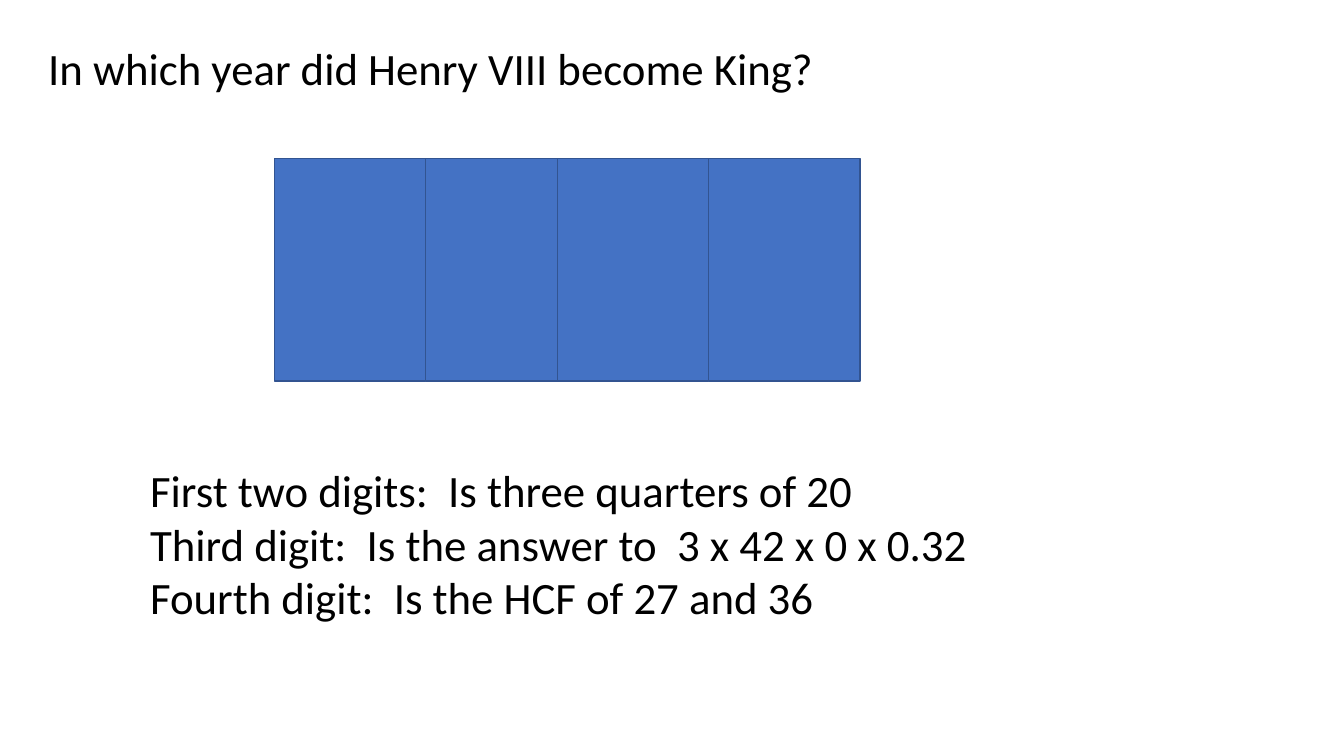
from pptx import Presentation
from pptx.dml.color import RGBColor
from pptx.enum.shapes import MSO_SHAPE
from pptx.enum.text import MSO_AUTO_SIZE
from pptx.util import Pt

PX = 9144  # 100 px to the inch
RECT = MSO_SHAPE.RECTANGLE
GROW = MSO_AUTO_SIZE.SHAPE_TO_FIT_TEXT


def color(code):
    return RGBColor.from_string(code)


class Board:
    font = "Calibri"
    size = 32
    ink = "000000"
    fill = "4472C4"
    edge = "325491"

    def __init__(self, slide):
        self.slide = slide

    def text(self, x, y, w, h, words):
        box = self.slide.shapes.add_textbox(x * PX, y * PX, w * PX, h * PX)
        frame = box.text_frame
        frame.word_wrap = True
        frame.auto_size = GROW
        frame.text = words
        for para in frame.paragraphs:
            for run in para.runs:
                run.font.name = self.font
                run.font.size = Pt(self.size)
                run.font.color.rgb = color(self.ink)

    def tile(self, x, y, w, h):
        tile = self.slide.shapes.add_shape(RECT, x * PX, y * PX, w * PX, h * PX)
        tile.shadow.inherit = False
        tile.fill.solid()
        tile.fill.fore_color.rgb = color(self.fill)
        tile.line.color.rgb = color(self.edge)
        tile.line.width = Pt(1)


def main():
    deck = Presentation()
    deck.slide_width = 1333 * PX
    deck.slide_height = 750 * PX
    board = Board(deck.slides.add_slide(deck.slide_layouts[6]))

    # Question
    board.text(38, 36, 1190, 64, "In which year did Henry VIII become King?")

    # One tile per digit of the year, in two pairs that overlap slightly
    wide = 150
    for pair in (272, 553):
        for step in range(2):
            board.tile(pair + step * wide, 157, wide, 221)

    # Clues
    clues = (
        "First two digits:  Is three quarters of 20",
        "Third digit:  Is the answer to  3 x 42 x 0 x 0.32",
        "Fourth digit:  Is the HCF of 27 and 36",
    )
    board.text(139, 454, 1104, 172, "\n".join(clues))

    deck.save("out.pptx")


if __name__ == "__main__":
    main()
